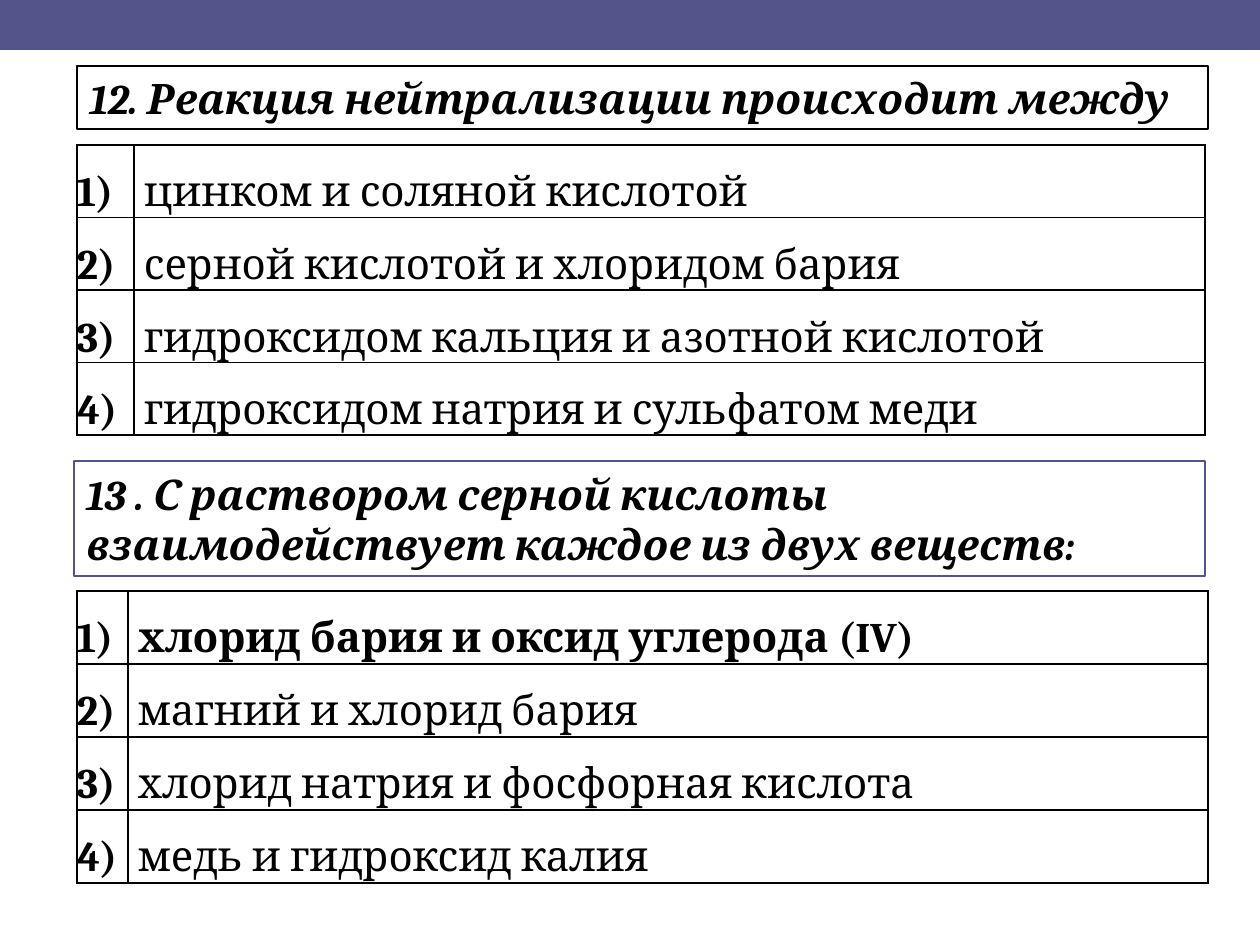
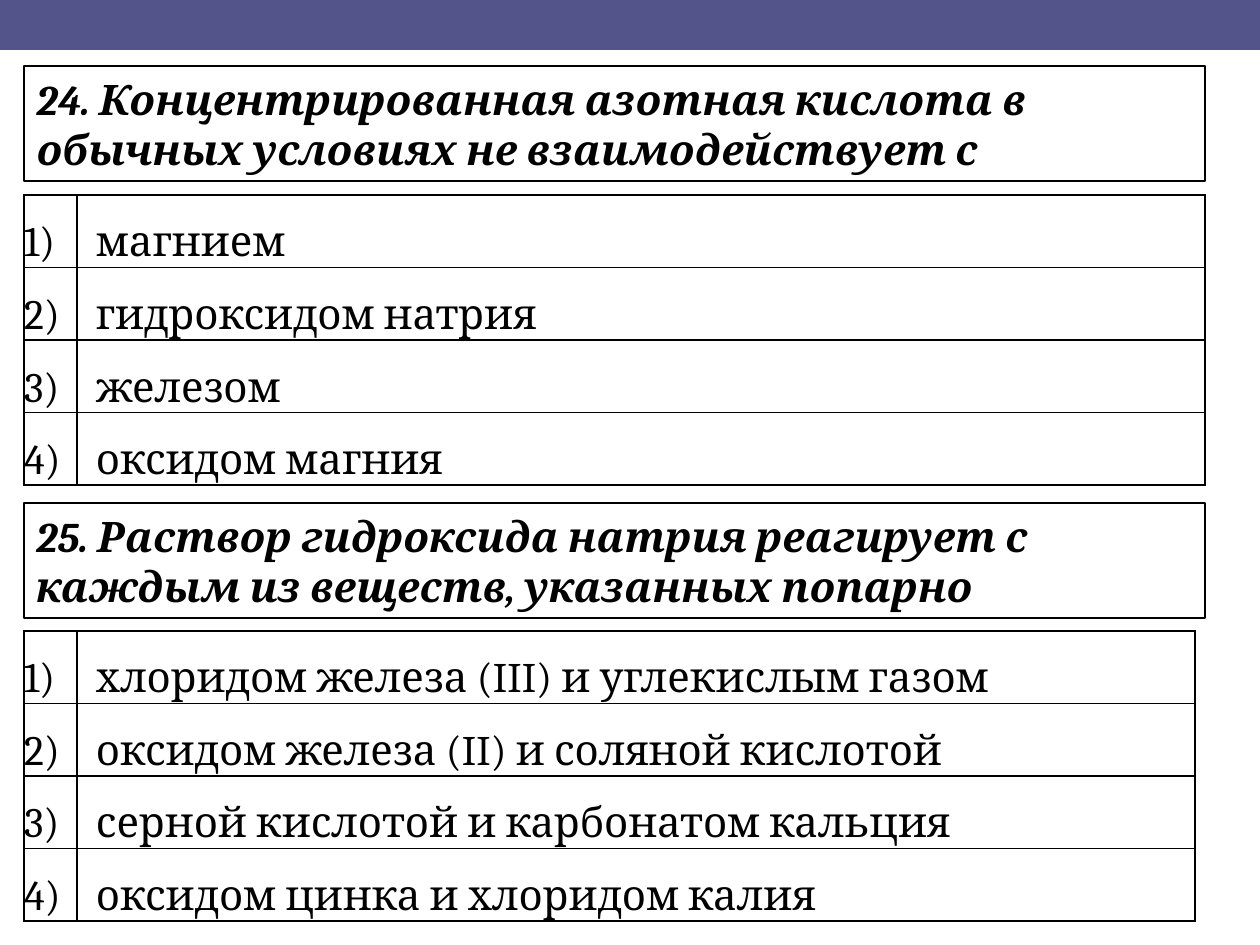
from dataclasses import dataclass
from lxml import etree
from pptx import Presentation
from pptx import util as u
from pptx.dml.color import RGBColor
from pptx.enum import shapes, text
from pptx.oxml.ns import qn

HUES = {"ink": "000000", "band": "53548A", "paper": "FFFFFF"}
FONT = "Cambria"
SCALE = 914400 / 126
WIDE, HIGH, BAND = 1260, 945, 50


@dataclass(frozen=True)
class Quiz:
    ask: str
    box: tuple[int, int, int, int]
    grid: tuple[int, int]
    cols: tuple[int, int]
    picks: tuple[str, ...]
    row: int = 72
    pad: int = 19
    line: str = "ink"
    strong: bool = False
    key: int = 0


PAGES = (
    (
        Quiz("12. Реакция нейтрализации происходит между",
             (77, 66, 1131, 63), (77, 145), (57, 1071),
             ("цинком и соляной кислотой",
              "серной кислотой и хлоридом бария",
              "гидроксидом кальция и азотной кислотой",
              "гидроксидом натрия и сульфатом меди"),
             pad=10, strong=True),
        Quiz("13 . С раствором серной кислоты взаимодействует каждое из двух веществ:",
             (74, 461, 1131, 115), (77, 591), (51, 1080),
             ("хлорид бария и оксид углерода (IV)",
              "магний и хлорид бария",
              "хлорид натрия и фосфорная кислота",
              "медь и гидроксид калия"),
             row=73, pad=10, line="band", strong=True, key=1),
    ),
    (
        Quiz("24. Концентрированная азотная кислота в обычных условиях не взаимодействует с",
             (24, 66, 1181, 115), (24, 195), (53, 1128),
             ("магнием", "гидроксидом натрия", "железом", "оксидом магния")),
        Quiz("25. Раствор гидроксида натрия реагирует с каждым из веществ, указанных попарно",
             (24, 503, 1181, 115), (24, 631), (53, 1118),
             ("хлоридом железа (III) и углекислым газом",
              "оксидом железа (II) и соляной кислотой",
              "серной кислотой и карбонатом кальция",
              "оксидом цинка и хлоридом калия")),
    ),
)


def px(n: int) -> u.Emu:
    return u.Emu(round(n * SCALE))


def hue(name: str) -> RGBColor:
    return RGBColor.from_string(HUES[name])


def write(frame, words: str, *, bold=False, slant=False, space=1.0) -> None:
    par = frame.paragraphs[0]
    par.alignment = text.PP_ALIGN.LEFT
    par.line_spacing = space
    run = par.add_run()
    run.text = words
    font = run.font
    font.name, font.size = FONT, u.Pt(24)
    font.bold, font.italic = bold, slant
    font.color.rgb = hue("ink")


def edge(cell) -> None:
    props = cell._tc.get_or_add_tcPr()
    for spot, tag in enumerate(("a:lnL", "a:lnR", "a:lnT", "a:lnB")):
        line = etree.Element(qn(tag), w=str(u.Pt(1)))
        fill = etree.SubElement(line, qn("a:solidFill"))
        etree.SubElement(fill, qn("a:srgbClr"), val=HUES["ink"])
        props.insert(spot, line)


def fill_cell(cell, words: str, *, pad=0, bold=False) -> None:
    cell.margin_left = px(pad)
    cell.margin_right = cell.margin_top = cell.margin_bottom = 0
    cell.fill.solid()
    cell.fill.fore_color.rgb = hue("paper")
    edge(cell)
    write(cell.text_frame, words, bold=bold, space=1.5)


def draw_ask(shape, quiz: Quiz) -> None:
    shape.left, shape.top, shape.width, shape.height = map(px, quiz.box)
    shape.line.color.rgb = hue(quiz.line)
    shape.line.width = u.Pt(0.75)
    frame = shape.text_frame
    frame.word_wrap = True
    frame.auto_size = text.MSO_AUTO_SIZE.NONE
    frame.vertical_anchor = text.MSO_ANCHOR.MIDDLE
    write(frame, quiz.ask, bold=True, slant=True)


def draw_picks(slide, quiz: Quiz) -> None:
    count = len(quiz.picks)
    size = map(px, (*quiz.grid, sum(quiz.cols), quiz.row * count))
    table = slide.shapes.add_table(count, 2, *size).table
    table.first_row = table.horz_banding = False
    for col, width in zip(table.columns, quiz.cols):
        col.width = px(width)
    for num, pick in enumerate(quiz.picks, 1):
        table.rows[num - 1].height = px(quiz.row)
        fill_cell(table.cell(num - 1, 0), f"{num})", bold=quiz.strong)
        fill_cell(table.cell(num - 1, 1), pick, pad=quiz.pad, bold=num == quiz.key)


def add_band(deck, slide) -> None:
    band = slide.shapes.add_shape(shapes.MSO_SHAPE.RECTANGLE, 0, 0, px(WIDE), px(BAND))
    band.shadow.inherit = False
    band.fill.solid()
    band.fill.fore_color.rgb = hue("band")
    band.line.fill.background()
    deck.slide_master.shapes.element.insert(2, band.element)


def main() -> None:
    deck = Presentation()
    deck.slide_width, deck.slide_height = px(WIDE), px(HIGH)
    for page in PAGES:
        slide = deck.slides.add_slide(deck.slide_layouts[5])
        if len(deck.slides) == 1:
            add_band(deck, slide)
        for spot, quiz in enumerate(page):
            if spot == 0:
                shape = slide.shapes.title
            else:
                shape = slide.shapes.add_textbox(*map(px, quiz.box))
            draw_ask(shape, quiz)
            draw_picks(slide, quiz)
    deck.save("out.pptx")


if __name__ == "__main__":
    main()
